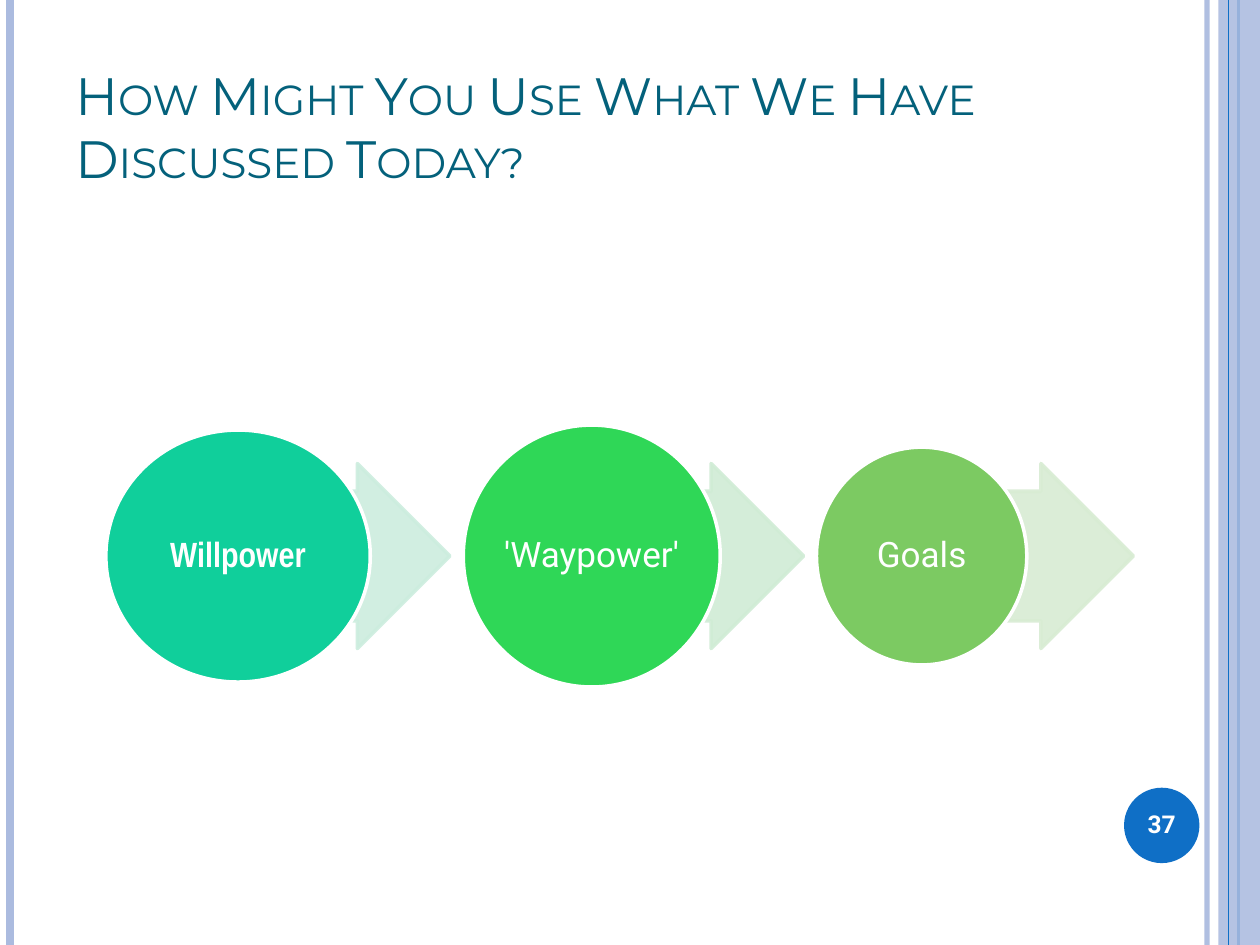
from lxml.etree import SubElement
from pptx import Presentation
from pptx.dml.color import RGBColor
from pptx.enum.shapes import MSO_CONNECTOR, MSO_SHAPE
from pptx.enum.text import MSO_ANCHOR, PP_ALIGN
from pptx.oxml.ns import qn
from pptx.util import Cm, Pt

WHITE = RGBColor(0xFF, 0xFF, 0xFF)
PERIWINKLE = RGBColor(0xAB, 0xBB, 0xDF)
BLUE = RGBColor(0x0F, 0x6F, 0xC6)
TEAL = RGBColor(0x04, 0x61, 0x7B)
MINT = RGBColor(0x10, 0xCF, 0x9B)
PALE_MINT = RGBColor(0xCC, 0xED, 0xDE)
GREEN = RGBColor(0x2F, 0xD7, 0x57)
PALE_GREEN = RGBColor(0xD0, 0xEC, 0xD5)
OLIVE = RGBColor(0x7C, 0xCA, 0x62)
PALE_OLIVE = RGBColor(0xD8, 0xEC, 0xD3)

SLIDE_WIDTH, SLIDE_HEIGHT = 25.4, 19.05
FLOW_MIDDLE = 11.21
ARROW_WIDTH, ARROW_HEIGHT = 4.27, 3.73

# label, centre, width, height, circle colour, arrow colour, font
STEPS = [
    ("Willpower", 4.8, 5.33, 5.08, MINT, PALE_MINT,
     {"name": "Arial Narrow", "size": Pt(20), "bold": True}),
    ("'Waypower'", 11.93, 5.18, 5.28, GREEN, PALE_GREEN,
     {"name": "Roboto", "size": Pt(20)}),
    ("Goals", 18.58, 4.24, 4.39, OLIVE, PALE_OLIVE,
     {"name": "Roboto", "size": Pt(20)}),
]


def set_opacity(fill_parent, percent):
    """Make every solid colour found under the element partly transparent."""
    for color in fill_parent.iter(qn("a:srgbClr")):
        SubElement(color, qn("a:alpha")).set("val", str(percent * 1000))


def add_rule(slide, x, width, color, opacity=100):
    """Draw a vertical line over the full slide height."""
    rule = slide.shapes.add_connector(
        MSO_CONNECTOR.STRAIGHT, Cm(x), Cm(0), Cm(x), Cm(SLIDE_HEIGHT))
    rule.line.width = Pt(width)
    rule.line.color.rgb = color
    properties = rule._element.spPr
    if opacity < 100:
        set_opacity(properties, opacity)
    SubElement(properties, qn("a:effectLst"))


def add_filled_shape(slide, kind, box, fill, outline=None, opacity=100):
    shape = slide.shapes.add_shape(kind, *map(Cm, box))
    shape.shadow.inherit = False
    shape.fill.solid()
    shape.fill.fore_color.rgb = fill
    if outline is None:
        shape.line.fill.background()
    else:
        shape.line.color.rgb = outline
        shape.line.width = Pt(2)
    if opacity < 100:
        set_opacity(shape._element.spPr, opacity)
    return shape


def write_text(shape, text, color, font_format, frame_format, **paragraph_format):
    frame = shape.text_frame
    paragraph = frame.paragraphs[0]
    run = paragraph.add_run()
    run.text = text
    run.font.color.rgb = color
    for target, values in ((frame, frame_format),
                           (paragraph, paragraph_format),
                           (run.font, font_format)):
        for name, value in values.items():
            setattr(target, name, value)
    return run


def write_centred(shape, text, font_format):
    """Write white text in the middle of a shape with thin margins."""
    sides = ("left", "top", "right", "bottom")
    frame_format = {f"margin_{side}": Cm(0.03) for side in sides}
    frame_format.update(vertical_anchor=MSO_ANCHOR.MIDDLE, word_wrap=True)
    write_text(shape, text, WHITE, font_format, frame_format,
               alignment=PP_ALIGN.CENTER, line_spacing=0.9)


def add_step(slide, label, centre, width, height, color, arrow_color, font_format):
    """Add a circle with an arrow that starts at the circle's centre."""
    arrow = add_filled_shape(
        slide, MSO_SHAPE.RIGHT_ARROW,
        (centre, FLOW_MIDDLE - ARROW_HEIGHT / 2, ARROW_WIDTH, ARROW_HEIGHT),
        arrow_color, arrow_color, 90)
    arrow.adjustments[0] = 0.7
    arrow.adjustments[1] = 0.5
    circle = add_filled_shape(
        slide, MSO_SHAPE.OVAL,
        (centre - width / 2, FLOW_MIDDLE - height / 2, width, height),
        color, WHITE)
    write_centred(circle, label, font_format)


def add_title(slide, text):
    title = slide.shapes.add_textbox(Cm(1.27), Cm(0.76), Cm(20.75), Cm(3.18))
    run = write_text(title, text, TEAL, {"name": "Montserrat", "size": Pt(30)},
                     {"word_wrap": True, "vertical_anchor": MSO_ANCHOR.BOTTOM})
    run._r.get_or_add_rPr().set("cap", "small")


def add_frame(slide):
    """Add the coloured rules and band along the slide's sides."""
    add_rule(slide, 24.33, 3, PERIWINKLE, 93)
    add_rule(slide, 0.2, 4.5, PERIWINKLE)
    add_rule(slide, 24.97, 1.5, BLUE)
    add_filled_shape(slide, MSO_SHAPE.RECTANGLE,
                     (24.56, 0, SLIDE_WIDTH - 24.56, SLIDE_HEIGHT),
                     PERIWINKLE, opacity=87)
    add_rule(slide, 24.76, 0.75, BLUE)


def main():
    presentation = Presentation()
    presentation.slide_width = Cm(SLIDE_WIDTH)
    presentation.slide_height = Cm(SLIDE_HEIGHT)
    slide = presentation.slides.add_slide(presentation.slide_layouts[6])

    add_frame(slide)
    badge = add_filled_shape(slide, MSO_SHAPE.OVAL, (22.66, 15.88, 1.52, 1.52), BLUE)
    write_centred(badge, "37", {"name": "Roboto", "size": Pt(14), "bold": True})
    add_title(slide, "How Might You Use What We Have Discussed Today?")
    for step in STEPS:
        add_step(slide, *step)

    presentation.save("out.pptx")


if __name__ == "__main__":
    main()
